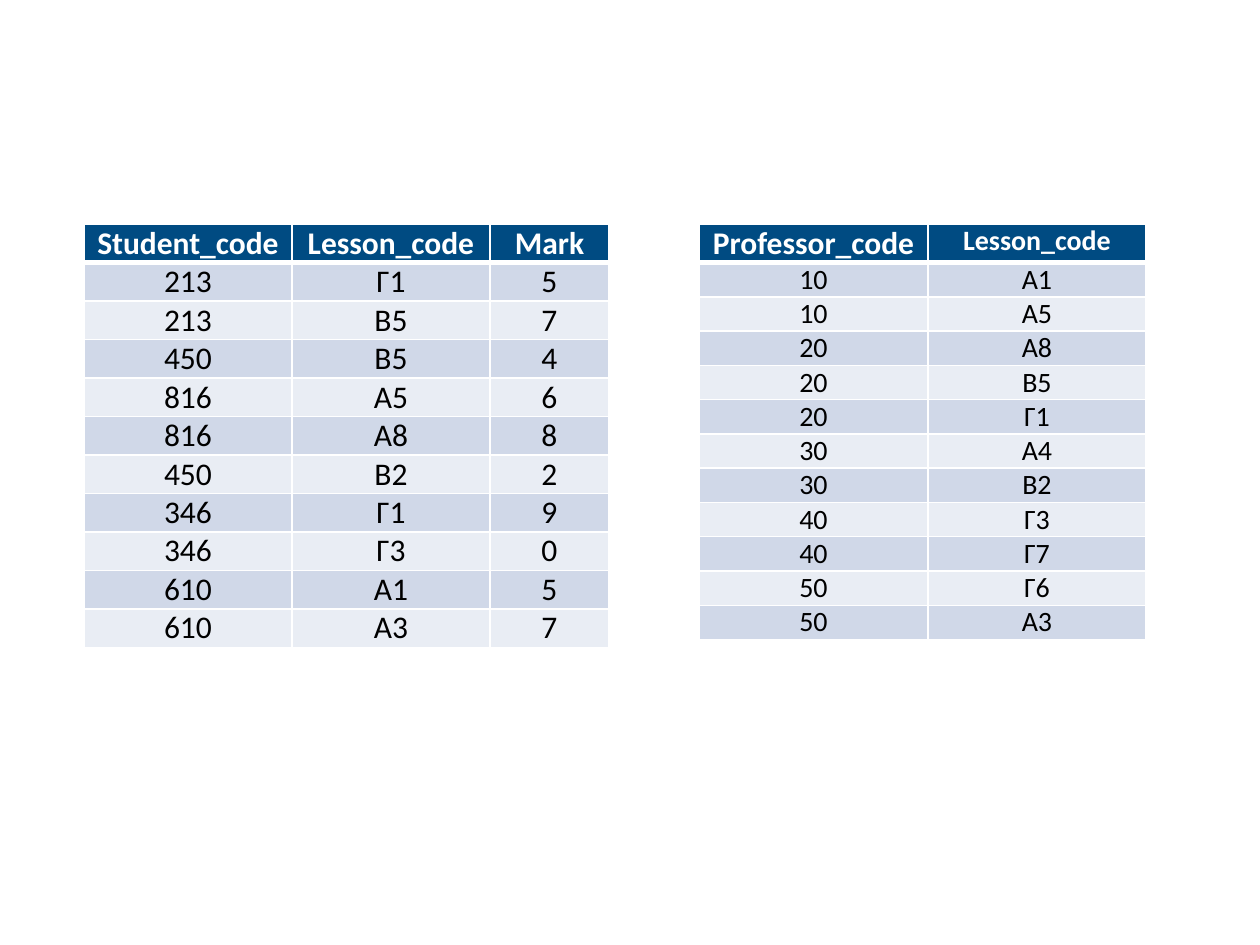
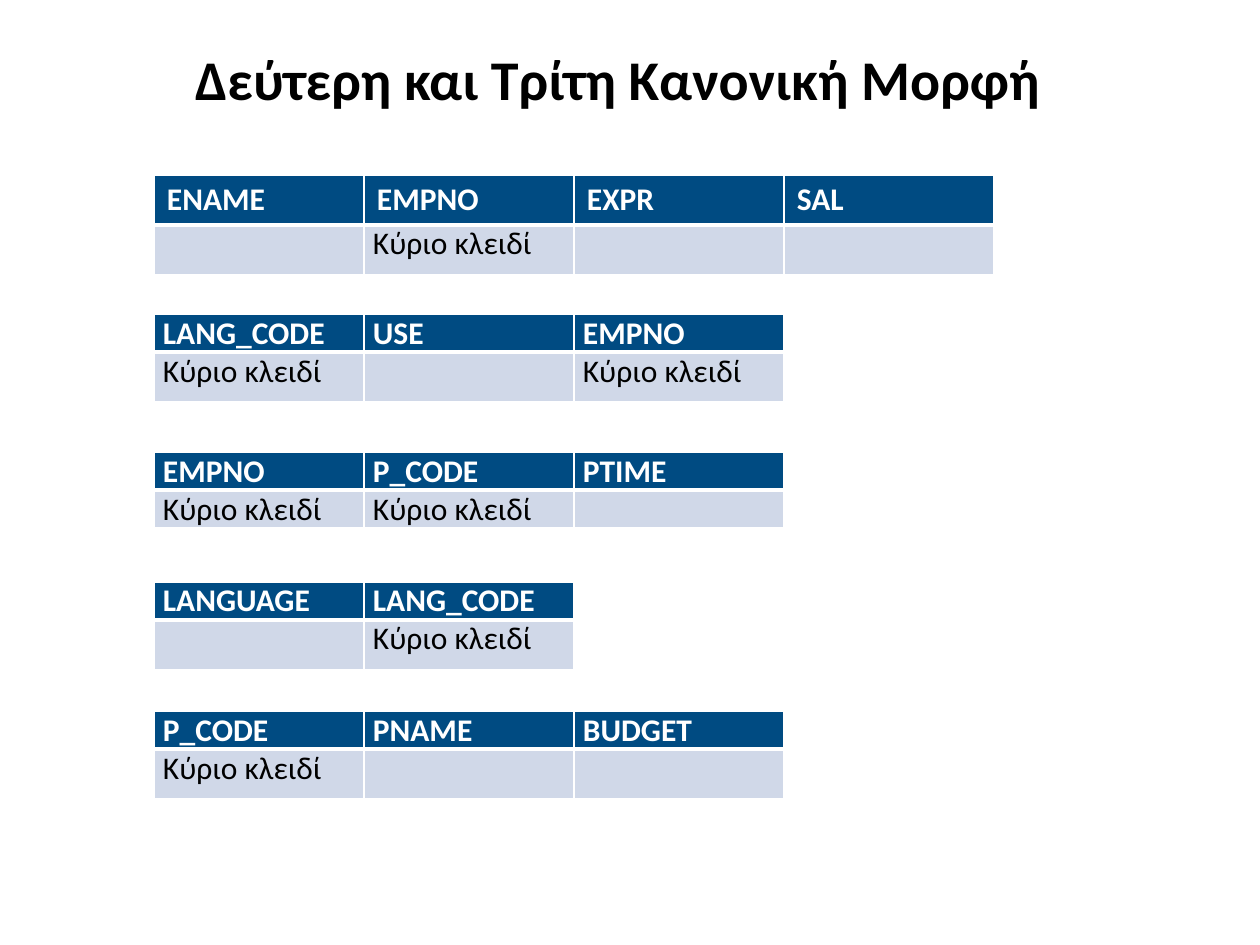
from lxml.etree import SubElement
from pptx import Presentation
from pptx.dml.color import RGBColor
from pptx.enum.text import MSO_ANCHOR, PP_ALIGN
from pptx.oxml.ns import qn
from pptx.util import Pt

EMU_PER_PX = 914400 / 126
FONT = "Calibri"
NAVY = RGBColor(0x00, 0x4B, 0x82)
BANDS = (RGBColor(0xD0, 0xD8, 0xE8), RGBColor(0xE9, 0xED, 0xF4))
WHITE = RGBColor(0xFF, 0xFF, 0xFF)
BLACK = RGBColor(0x00, 0x00, 0x00)

TIGHT = {"margin_left": 9, "margin_right": 9, "margin_top": 0, "margin_bottom": 0}
ROOMY = {"margin_left": 13, "margin_right": 13, "margin_top": 6, "margin_bottom": 6}
HEADER_FONT = {"name": FONT, "size": Pt(18), "bold": True}
BODY_FONT = {"name": FONT, "size": Pt(18), "bold": False}
TITLE_FONT = {"name": FONT, "size": Pt(32), "bold": True}

KEY = "Κύριο κλειδί"
MARKS = [
    ("Student_code", "Lesson_code", "Mark"),
    ("213", "Γ1", "5"),
    ("213", "Β5", "7"),
    ("450", "Β5", "4"),
    ("816", "Α5", "6"),
    ("816", "Α8", "8"),
    ("450", "Β2", "2"),
    ("346", "Γ1", "9"),
    ("346", "Γ3", "0"),
    ("610", "Α1", "5"),
    ("610", "Α3", "7"),
]
TEACHING = [
    ("Professor_code", "Lesson_code"),
    ("10", "Α1"),
    ("10", "Α5"),
    ("20", "Α8"),
    ("20", "Β5"),
    ("20", "Γ1"),
    ("30", "Α4"),
    ("30", "Β2"),
    ("40", "Γ3"),
    ("40", "Γ7"),
    ("50", "Γ6"),
    ("50", "Α3"),
]
RELATIONS = [
    (175, (50, 50), ("ENAME", "EMPNO", "EXPR", "SAL"), {"EMPNO"}),
    (314, (38, 50), ("LANG_CODE", "USE", "EMPNO"), {"LANG_CODE", "EMPNO"}),
    (452, (38, 38), ("EMPNO", "P_CODE", "PTIME"), {"EMPNO", "P_CODE"}),
    (582, (38, 50), ("LANGUAGE", "LANG_CODE"), {"LANG_CODE"}),
    (711, (38, 50), ("P_CODE", "PNAME", "BUDGET"), {"P_CODE"}),
]


def px(length):
    return round(length * EMU_PER_PX)


def apply(target, values):
    for name, value in values.items():
        setattr(target, name, value)


def write(paragraph, text, align, font_values, color):
    paragraph.alignment = align
    if text:
        run = paragraph.add_run()
        run.text = text
        apply(run.font, font_values)
        run.font.color.rgb = color


def add_borders(cell, top, bottom):
    properties = cell._tc.get_or_add_tcPr()
    for side, points in {"L": 1, "R": 1, "T": top, "B": bottom}.items():
        line = SubElement(properties, qn(f"a:ln{side}"), w=str(Pt(points)))
        fill = SubElement(line, qn("a:solidFill"))
        SubElement(fill, qn("a:srgbClr"), val=str(WHITE))


def add_data_table(slide, left, top, widths, heights, rows, align,
                   body_sizes=(18,), header_sizes=(18,), header_margins=TIGHT):
    frame = slide.shapes.add_table(len(rows), len(widths), px(left), px(top),
                                   px(sum(widths)), px(sum(heights)))
    table = frame.table
    for column, width in zip(table.columns, widths):
        column.width = px(width)
    for row, height in zip(table.rows, heights):
        row.height = px(height)
    for row_index, texts in enumerate(rows):
        is_header = row_index == 0
        sizes = header_sizes if is_header else body_sizes
        margins = header_margins if is_header else TIGHT
        for column_index, text in enumerate(texts):
            cell = table.cell(row_index, column_index)
            add_borders(cell, 3 if row_index == 1 else 1, 3 if is_header else 1)
            apply(cell, {name: px(value) for name, value in margins.items()})
            cell.fill.solid()
            cell.fill.fore_color.rgb = NAVY if is_header else BANDS[(row_index - 1) % 2]
            font_values = dict(HEADER_FONT if is_header else BODY_FONT)
            font_values["size"] = Pt(sizes[column_index % len(sizes)])
            write(cell.text_frame.paragraphs[0], text, align, font_values,
                  WHITE if is_header else BLACK)


def add_title(slide, left, top, width, height, text):
    box = slide.shapes.add_textbox(px(left), px(top), px(width), px(height))
    apply(box.text_frame, {"word_wrap": True, "vertical_anchor": MSO_ANCHOR.MIDDLE})
    write(box.text_frame.paragraphs[0], text, PP_ALIGN.CENTER, TITLE_FONT, BLACK)


def build_code_tables(slide, left, top):
    add_data_table(slide, left, top, (208, 198, 119), [38] * len(MARKS),
                   MARKS, PP_ALIGN.CENTER)
    add_data_table(slide, left + 615, top, (229, 218),
                   [38] + [34] * (len(TEACHING) - 1), TEACHING, PP_ALIGN.CENTER,
                   body_sizes=(16,), header_sizes=(18, 16))


def build_normal_forms(slide, left, column_width):
    add_title(slide, 64, 16, 1108, 125, "Δεύτερη και Τρίτη Κανονική Μορφή")
    for top, heights, fields, keys in RELATIONS:
        key_row = [KEY if field in keys else "" for field in fields]
        is_roomy = heights[0] > 38
        add_data_table(slide, left, top, [column_width] * len(fields), heights,
                       [fields, key_row],
                       PP_ALIGN.LEFT if is_roomy else PP_ALIGN.JUSTIFY,
                       header_margins=ROOMY if is_roomy else TIGHT)


def main():
    presentation = Presentation()
    apply(presentation, {"slide_width": px(1260), "slide_height": px(945)})
    blank = presentation.slide_layouts[6]
    build_code_tables(presentation.slides.add_slide(blank), 84, 224)
    build_normal_forms(presentation.slides.add_slide(blank), 154, 210)
    presentation.save("out.pptx")


if __name__ == "__main__":
    main()
